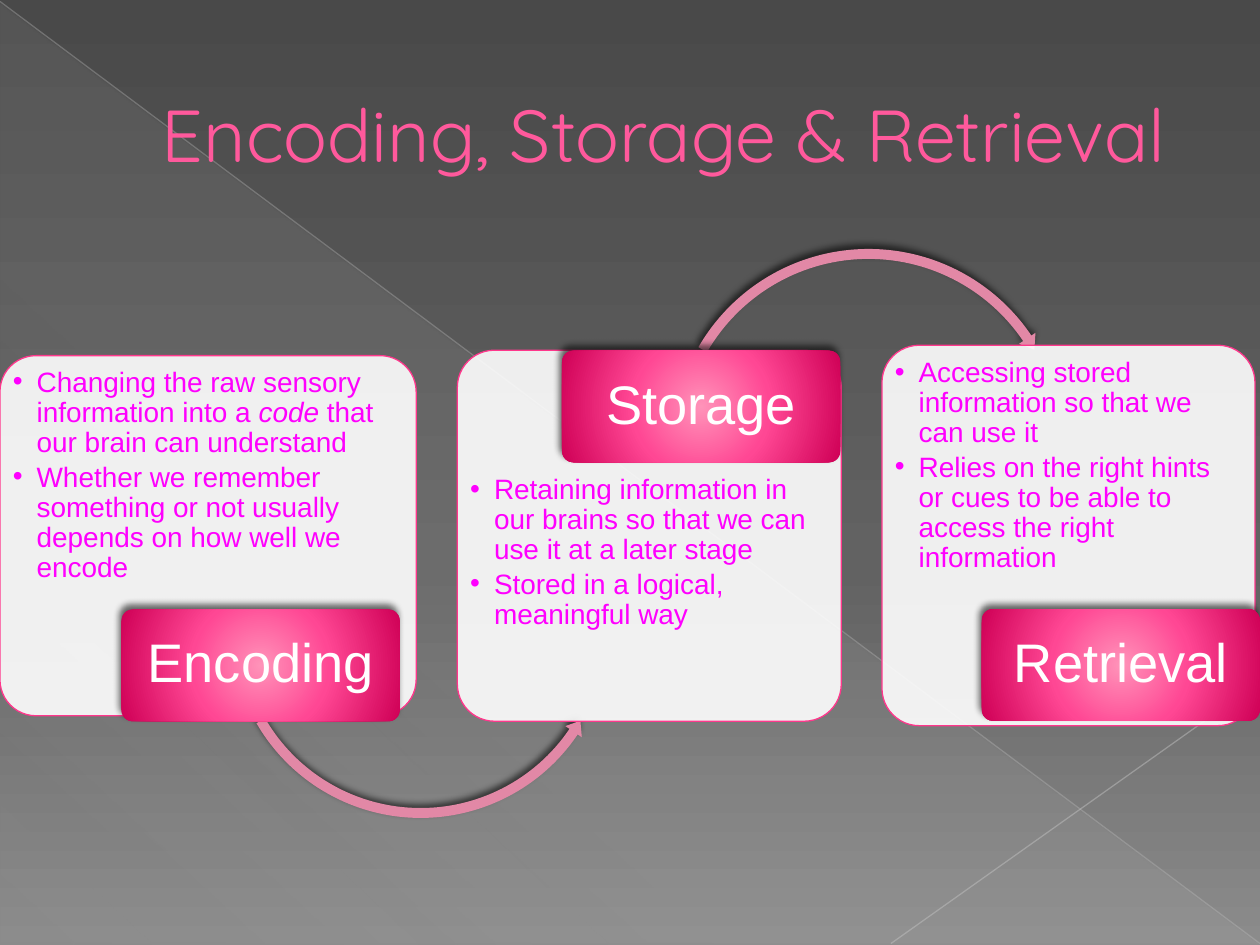
from math import cos, radians, sin, tan

from lxml.etree import SubElement
from pptx import Presentation
from pptx.dml.color import RGBColor
from pptx.enum.shapes import MSO_CONNECTOR, MSO_SHAPE
from pptx.enum.text import MSO_ANCHOR, PP_ALIGN
from pptx.oxml import parse_xml
from pptx.oxml.ns import nsdecls, qn
from pptx.util import Cm, Pt

COLORS = {"title": "FF599C", "bullet": "FF00FF", "white": "FFFFFF",
          "card_line": "FF378C", "arrow": "E288A6", "shadow": "000000",
          "diagonal": "BEBEBE", "corner": "C5C5C5"}
# Gradient stops: position %, colour, opacity %
BACKGROUND = [(0, "494949", 100), (60, "626262", 100), (100, "8B8B8B", 100)]
SHEEN = [(0, "D2D2D2", 10), (70, "D2D2D2", 8), (100, "D2D2D2", 1)]
PINK = [(0, "FF93B9", 100), (46, "FF4794", 100), (100, "CF0056", 100)]

LABEL_W, LABEL_H = 5.61, 2.25
# Card box, text offset from its top, label text, label offset, bullets
CARDS = [
    ((0, 7.17, 8.39, 7.26), 0.17, "Encoding", (2.45, 5.12),
     ["Changing the raw sensory information into a *code *that our brain can understand",
      "Whether we remember something or not usually depends on how well we encode"]),
    ((9.22, 7.06, 7.74, 7.48), 2.44, "Storage", (2.11, 0.01),
     ["Retaining information in our brains so that we can use it at a later stage",
      "Stored in a logical, meaningful way"]),
    ((17.78, 6.96, 7.52, 7.67), 0.18, "Retrieval", (2.01, 5.32),
     ["Accessing stored information so that we can use it",
      "Relies on the right hints or cues to be able to access the right information"]),
]


def rgb(name):
    return RGBColor.from_string(COLORS[name])


def set_format(obj, values):
    for name, value in values.items():
        setattr(obj, name, value)


def set_insets(tf, x, y):
    set_format(tf, dict(margin_left=Cm(x), margin_right=Cm(x),
                        margin_top=Cm(y), margin_bottom=Cm(y), word_wrap=True))


def set_alpha(parent, percent):
    SubElement(parent.find(".//" + qn("a:srgbClr")), qn("a:alpha"),
               val=str(percent * 1000))


def set_gradient(parent, stops, angle=None):
    """Swap the solid fill for a linear gradient, or a circular one without angle."""
    gs = "".join(f'<a:gs pos="{pos * 1000}"><a:srgbClr val="{color}">'
                 f'<a:alpha val="{alpha * 1000}"/></a:srgbClr></a:gs>'
                 for pos, color, alpha in stops)
    if angle is None:
        way = ('<a:path path="circle"><a:fillToRect l="50000" t="50000" '
               'r="50000" b="50000"/></a:path>')
    else:
        way = f'<a:lin ang="{angle * 60000}" scaled="0"/>'
    grad = parse_xml(f'<a:gradFill {nsdecls("a")} rotWithShape="1">'
                     f'<a:gsLst>{gs}</a:gsLst>{way}</a:gradFill>')
    parent.replace(parent.find(qn("a:solidFill")), grad)


def style_shape(sp, fill="white", line=None):
    sp.shadow.inherit = False
    sp.fill.solid()
    sp.fill.fore_color.rgb = rgb(fill)
    if line:
        sp.line.color.rgb = rgb(line)
        sp.line.width = Pt(0.75)
    else:
        sp.line.fill.background()


def add_shadow(sp):
    effects = sp._element.spPr.find(qn("a:effectLst"))
    shadow = SubElement(effects, qn("a:outerShdw"), blurRad=str(Pt(4)),
                        dist=str(Pt(3)), dir=str(245 * 60000), rotWithShape="0")
    SubElement(shadow, qn("a:srgbClr"), val=COLORS["shadow"])
    set_alpha(shadow, 60)


def add_round_rect(s, x, y, w, h):
    sp = s.shapes.add_shape(MSO_SHAPE.ROUNDED_RECTANGLE, Cm(x), Cm(y), Cm(w), Cm(h))
    sp.adjustments[0] = 0.1
    return sp


def add_line(s, x1, y1, x2, y2, color, alpha):
    c = s.shapes.add_connector(MSO_CONNECTOR.STRAIGHT, Cm(x1), Cm(y1), Cm(x2), Cm(y2))
    c.line.color.rgb = rgb(color)
    c.line.width = Pt(0.75)
    set_alpha(c._element.spPr, alpha)
    SubElement(c._element.spPr, qn("a:effectLst"))


def add_backdrop(s, w, h):
    s.background.fill.solid()
    s.background.fill.fore_color.rgb = rgb("white")
    set_gradient(s._element.find(".//" + qn("p:bgPr")), BACKGROUND, 90)
    sp = s.shapes.add_shape(MSO_SHAPE.RIGHT_TRIANGLE, 0, Cm(0.05), Cm(w), Cm(h - 0.05))
    style_shape(sp)
    set_gradient(sp._element.spPr, SHEEN, 133)
    add_line(s, 0, 0.03, w, h - 0.03, "diagonal", 35)
    add_line(s, w, 13.74, 17.96, h - 0.03, "corner", 45)


def add_title(s, x, y, w, h):
    title = s.shapes.title
    s.shapes._spTree.append(title._element)  # in front of the backdrop
    set_format(title, dict(left=Cm(x), top=Cm(y), width=Cm(w), height=Cm(h)))
    tf = title.text_frame
    set_insets(tf, 0.25, 0.13)
    tf.vertical_anchor = MSO_ANCHOR.MIDDLE
    p = tf.paragraphs[0]
    p.alignment = PP_ALIGN.CENTER
    p._p.get_or_add_pPr().set("marL", str(Cm(1.35)))
    r = p.add_run()
    r.text = "Encoding, Storage & Retrieval"
    set_format(r.font, dict(name="Quicksand", size=Pt(42)))
    r.font.color.rgb = rgb("title")


def add_bullet(p, text):
    """Write one bullet; words between asterisks are italic."""
    p.line_spacing = 0.9
    pPr = p._p.get_or_add_pPr()
    pPr.set("marL", str(Cm(0.48)))
    pPr.set("indent", str(-Cm(0.48)))
    SubElement(SubElement(pPr, qn("a:buClr")), qn("a:srgbClr"), val=COLORS["bullet"])
    SubElement(pPr, qn("a:buFont"), typeface="Arial")
    SubElement(pPr, qn("a:buChar"), char="•")
    for i, part in enumerate(text.split("*")):
        r = p.add_run()
        r.text = part
        set_format(r.font, dict(name="Arial", size=Pt(16), italic=i % 2 == 1))
        r.font.color.rgb = rgb("bullet")


def add_card(s, box, text_top, bullets):
    x, y, w, h = box
    sp = add_round_rect(s, *box)
    style_shape(sp, line="card_line")
    set_alpha(sp._element.spPr, 90)
    tb = s.shapes.add_textbox(Cm(x + 0.18), Cm(y + text_top), Cm(w - 0.4), Cm(5.4))
    tf = tb.text_frame
    set_insets(tf, 0.08, 0.08)
    for i, text in enumerate(bullets):
        p = tf.add_paragraph() if i else tf.paragraphs[0]
        p.space_before = Pt(2.4 if i else 0)
        add_bullet(p, text)


def add_label(s, x, y, text):
    sp = add_round_rect(s, x, y, LABEL_W, LABEL_H)
    style_shape(sp)
    set_gradient(sp._element.spPr, PINK)
    add_shadow(sp)
    tf = sp.text_frame
    set_insets(tf, 0.15, 0.1)
    tf.vertical_anchor = MSO_ANCHOR.MIDDLE
    p = tf.paragraphs[0]
    set_format(p, dict(alignment=PP_ALIGN.CENTER, line_spacing=0.9))
    r = p.add_run()
    r.text = text
    set_format(r.font, dict(name="Arial", size=Pt(31)))
    r.font.color.rgb = rgb("white")


def add_arc_arrow(s, cx, cy, radius, side):
    """Arc from left to right round a centre; side is 1 for below, -1 for above."""
    half = radius + 0.19
    start, mid, end, tip, band = 150, 92, 34, 30, 0.1

    def point(offset, angle, lead=0):
        """Point on the ring, moved along its tangent by lead radii."""
        a, rad = radians(angle), radius + offset
        return (Cm(half + rad * (cos(a) - lead * sin(a))),
                Cm(half + side * rad * (sin(a) + lead * cos(a))))

    def draw(tag, *points):
        segment = SubElement(path, qn(tag))
        for x, y in points:
            SubElement(segment, qn("a:pt"), x=str(x), y=str(y))

    def draw_arc(offset, a, b):
        k = 4 / 3 * tan(radians(b - a) / 4)
        draw("a:cubicBezTo", point(offset, a, k), point(offset, b, -k), point(offset, b))

    size = Cm(2 * half)
    builder = s.shapes.build_freeform(0, 0)
    builder.add_line_segments([(size, 0), (size, size)])
    sp = builder.convert_to_shape(Cm(cx - half), Cm(cy - half))
    path = sp._element.spPr.find(".//" + qn("a:path"))
    for child in list(path):
        path.remove(child)
    draw("a:moveTo", point(band, start))
    draw_arc(band, start, mid)
    draw_arc(band, mid, end)
    for offset, angle in ((0.2, end), (0, tip), (-0.2, end), (-band, end)):
        draw("a:lnTo", point(offset, angle))
    draw_arc(-band, end, mid)
    draw_arc(-band, mid, start)
    draw("a:close")
    style_shape(sp, "arrow")
    add_shadow(sp)


def main():
    w, h = 25.4, 19.05
    prs = Presentation()
    prs.slide_width, prs.slide_height = Cm(w), Cm(h)
    s = prs.slides.add_slide(prs.slide_layouts[5])
    add_backdrop(s, w, h)
    add_title(s, 1.27, 0.74, 22.86, 3.89)
    arrows = [(8.48, 12.67, 3.72, 1), (17.51, 8.98, 3.86, -1), None]
    for (box, text_top, label, (dx, dy), bullets), arrow in zip(CARDS, arrows):
        add_card(s, box, text_top, bullets)
        if arrow:
            add_arc_arrow(s, *arrow)
        add_label(s, box[0] + dx, box[1] + dy, label)
    prs.save("out.pptx")


if __name__ == "__main__":
    main()
